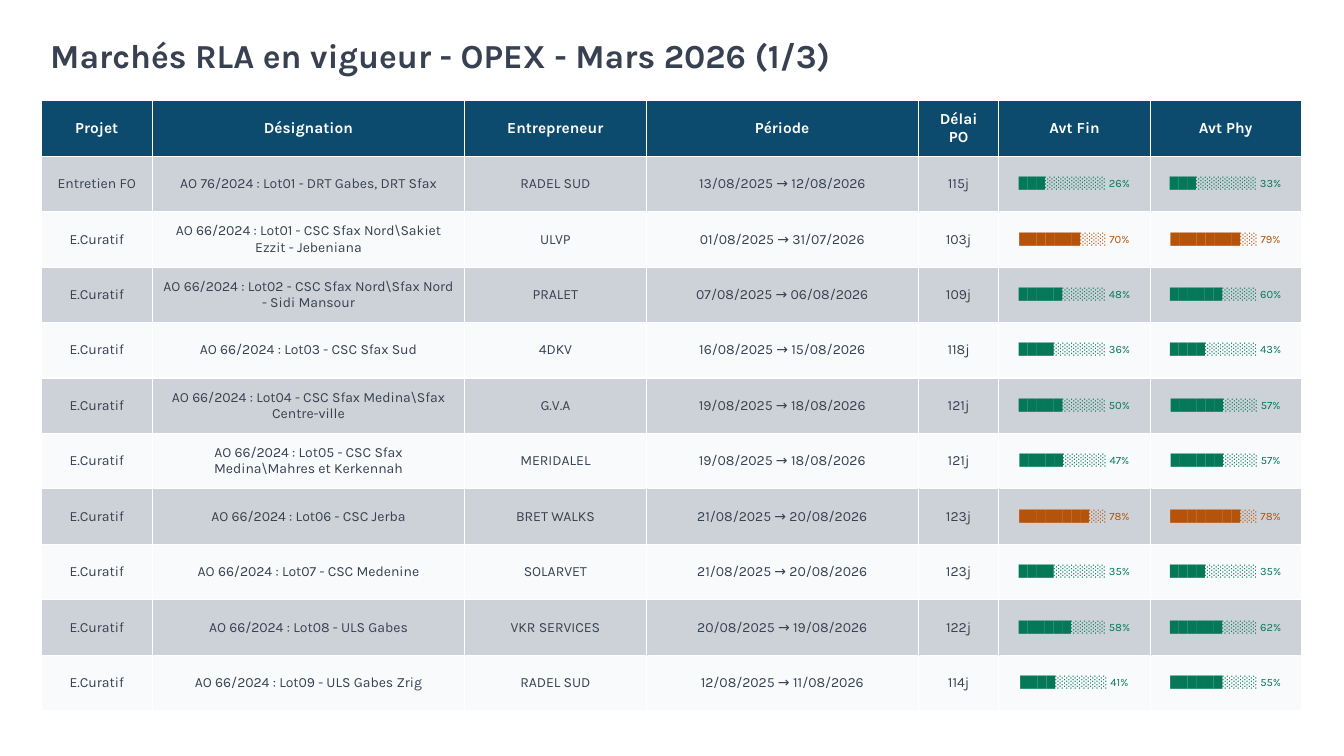
from dataclasses import dataclass

from pptx import Presentation
from pptx.dml.color import RGBColor
from pptx.enum.text import MSO_ANCHOR, MSO_AUTO_SIZE, PP_ALIGN
from pptx.util import Pt


@dataclass(frozen=True)
class Theme:
    font: str = "Karla"
    text: str = "374151"
    header_fill: str = "0C4A6E"
    header_text: str = "FFFFFF"
    row_fills: tuple = ("CCD2D8", "F8FAFC")
    moderate: str = "047857"
    advanced: str = "B45309"
    title_size: float = 24
    header_size: float = 11
    body_size: float = 10
    progress_size: float = 8


THEME = Theme()
TITLE = "Marchés RLA en vigueur - OPEX - Mars 2026 (1/3)"
TITLE_BOX = (28.8, 21.6, 864, 43.2)
TABLE_BOX = (29.52, 72, 900, 435.6)
ADVANCED_FROM = 70

# Heading and relative width of each column
COLUMNS = [
    ("Projet", 1.1),
    ("Désignation", 3.1),
    ("Entrepreneur", 1.8),
    ("Période", 2.7),
    ("Délai PO", 0.8),
    ("Avt Fin", 1.5),
    ("Avt Phy", 1.5),
]

# Project, lot, contractor, start, end, days left, financial %, physical %
CONTRACTS = [
    ("Entretien FO", "AO 76/2024 : Lot01 - DRT Gabes, DRT Sfax", "RADEL SUD",
     "13/08/2025", "12/08/2026", 115, 26, 33),
    ("E.Curatif", "AO 66/2024 : Lot01 - CSC Sfax Nord\\Sakiet Ezzit - Jebeniana", "ULVP",
     "01/08/2025", "31/07/2026", 103, 70, 79),
    ("E.Curatif", "AO 66/2024 : Lot02 - CSC Sfax Nord\\Sfax Nord - Sidi Mansour", "PRALET",
     "07/08/2025", "06/08/2026", 109, 48, 60),
    ("E.Curatif", "AO 66/2024 : Lot03 - CSC Sfax Sud", "4DKV",
     "16/08/2025", "15/08/2026", 118, 36, 43),
    ("E.Curatif", "AO 66/2024 : Lot04 - CSC Sfax Medina\\Sfax Centre-ville", "G.V.A",
     "19/08/2025", "18/08/2026", 121, 50, 57),
    ("E.Curatif", "AO 66/2024 : Lot05 - CSC Sfax Medina\\Mahres et Kerkennah", "MERIDALEL",
     "19/08/2025", "18/08/2026", 121, 47, 57),
    ("E.Curatif", "AO 66/2024 : Lot06 - CSC Jerba", "BRET WALKS",
     "21/08/2025", "20/08/2026", 123, 78, 78),
    ("E.Curatif", "AO 66/2024 : Lot07 - CSC Medenine", "SOLARVET",
     "21/08/2025", "20/08/2026", 123, 35, 35),
    ("E.Curatif", "AO 66/2024 : Lot08 - ULS Gabes", "VKR SERVICES",
     "20/08/2025", "19/08/2026", 122, 58, 62),
    ("E.Curatif", "AO 66/2024 : Lot09 - ULS Gabes Zrig", "RADEL SUD",
     "12/08/2025", "11/08/2026", 114, 41, 55),
]


def format_text(paragraph, size, color, bold=False):
    for run in paragraph.runs:
        run.font.name = THEME.font
        run.font.size = Pt(size)
        run.font.bold = bold
        run.font.color.rgb = RGBColor.from_string(color)


def add_title(slide, box):
    shape = slide.shapes.add_textbox(*map(Pt, box))
    text_frame = shape.text_frame
    text_frame.word_wrap = False
    text_frame.auto_size = MSO_AUTO_SIZE.SHAPE_TO_FIT_TEXT
    text_frame.text = TITLE
    format_text(text_frame.paragraphs[0], THEME.title_size, THEME.text, bold=True)


def fill_cell(cell, text, fill, size, color, bold=False):
    cell.fill.solid()
    cell.fill.fore_color.rgb = RGBColor.from_string(fill)
    cell.vertical_anchor = MSO_ANCHOR.MIDDLE
    cell.text_frame.text = text
    paragraph = cell.text_frame.paragraphs[0]
    paragraph.alignment = PP_ALIGN.CENTER
    format_text(paragraph, size, color, bold)


def progress_bar(percent):
    """Return a ten-block text gauge followed by its percentage."""
    done = round(percent / 10)
    return f"{'█' * done}{'░' * (10 - done)} {percent}%"


def add_contract_table(slide, box):
    width, height = box[2:]
    row_count = len(CONTRACTS) + 1
    table = slide.shapes.add_table(row_count, len(COLUMNS), *map(Pt, box)).table
    table.horz_banding = False
    for row in table.rows:
        row.height = Pt(height / row_count)

    total = sum(share for _, share in COLUMNS)
    for index, (heading, share) in enumerate(COLUMNS):
        table.columns[index].width = Pt(width * share / total)
        fill_cell(table.cell(0, index), heading, THEME.header_fill,
                  THEME.header_size, THEME.header_text, bold=True)

    for index, contract in enumerate(CONTRACTS):
        project, lot, contractor, start, end, days, *progress = contract
        fill = THEME.row_fills[index % 2]
        cells = list(table.rows[index + 1].cells)
        details = (project, lot, contractor, f"{start} → {end}", f"{days}j")
        for cell, text in zip(cells, details):
            fill_cell(cell, text, fill, THEME.body_size, THEME.text)
        for cell, percent in zip(cells[len(details):], progress):
            color = THEME.advanced if percent >= ADVANCED_FROM else THEME.moderate
            fill_cell(cell, progress_bar(percent), fill, THEME.progress_size, color)


def main():
    presentation = Presentation()
    presentation.slide_width, presentation.slide_height = Pt(960), Pt(540)
    slide = presentation.slides.add_slide(presentation.slide_layouts[6])
    add_title(slide, TITLE_BOX)
    add_contract_table(slide, TABLE_BOX)
    presentation.save("out.pptx")


if __name__ == "__main__":
    main()
